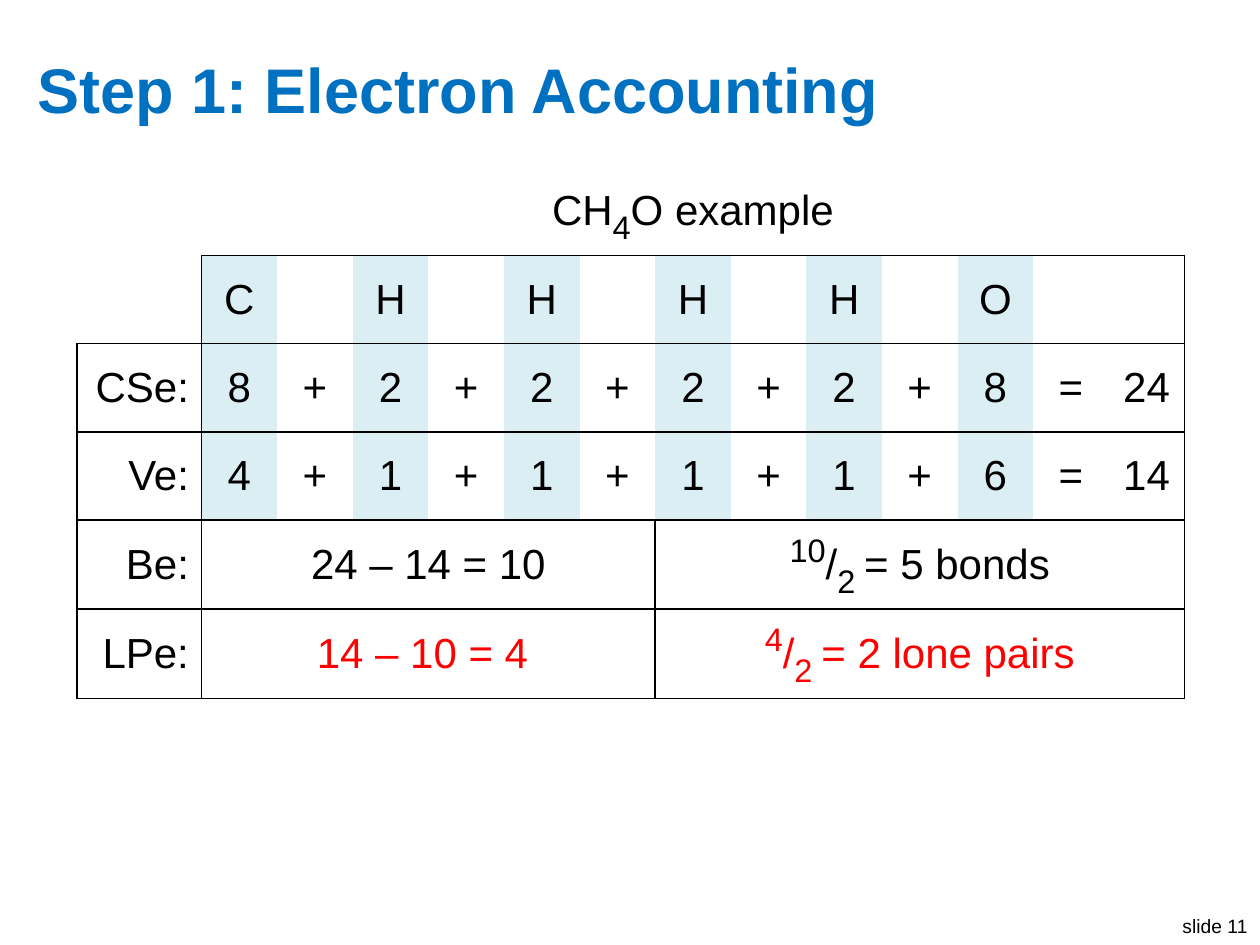
from typing import NamedTuple

from lxml import etree
from pptx import Presentation
from pptx.dml.color import RGBColor
from pptx.enum import text
from pptx.oxml import ns
from pptx.util import Inches, Pt

BLACK = RGBColor(0x00, 0x00, 0x00)
WHITE = RGBColor(0xFF, 0xFF, 0xFF)
BLUE = RGBColor(0x00, 0x70, 0xC0)
RED = RGBColor(0xFF, 0x00, 0x00)
PALE_BLUE = RGBColor(0xDB, 0xEE, 0xF4)
FONT = "Arial"
LEFT, CENTER, RIGHT = text.PP_ALIGN.LEFT, text.PP_ALIGN.CENTER, text.PP_ALIGN.RIGHT
SUB, SUPER = -25000, 30000
ROWS, COLS = 6, 14
SPLIT = 7  # grid line between the two merged answers


class Piece(NamedTuple):
    words: str
    baseline: int = 0


class Entry(NamedTuple):
    row: int
    col: int
    pieces: list[Piece]
    align: text.PP_ALIGN = CENTER
    span: int = 1
    color: RGBColor = BLACK


def style(r, size: float, color: RGBColor, bold: bool = False) -> None:
    r.font.name = FONT
    r.font.size = Pt(size)
    r.font.bold = bold
    r.font.color.rgb = color


def add_label(s, words: str, box: tuple, size: float, color: RGBColor,
              align: text.PP_ALIGN, bold: bool = False, wrap: bool = True,
              anchor=text.MSO_ANCHOR.TOP) -> None:
    tf = s.shapes.add_textbox(*map(Inches, box)).text_frame
    tf.word_wrap = wrap
    tf.vertical_anchor = anchor
    p = tf.paragraphs[0]
    p.text = words
    p.alignment = align
    style(p.runs[0], size, color, bold)


def has_vertical(row: int, line: int) -> bool:
    """Whether a vertical grid line is drawn beside this row."""
    first_row = {0: 2, 1: 1, SPLIT: 4, COLS: 1}
    return row >= first_row.get(line, ROWS)


def has_horizontal(line: int, col: int) -> bool:
    """Whether a horizontal grid line is drawn along this column."""
    return line >= (2 if col == 0 else 1)


def set_borders(cell, row: int, col: int, span: int) -> None:
    sides = {
        "lnL": has_vertical(row, col),
        "lnR": has_vertical(row, col + span),
        "lnT": has_horizontal(row, col),
        "lnB": has_horizontal(row + 1, col),
    }
    tc_pr = cell._tc.get_or_add_tcPr()
    for tag, drawn in sides.items():
        ln = etree.SubElement(tc_pr, ns.qn(f"a:{tag}"), w=str(Pt(1)))
        if drawn:
            fill = etree.SubElement(ln, ns.qn("a:solidFill"))
            etree.SubElement(fill, ns.qn("a:srgbClr"), val=str(BLACK))
        else:
            etree.SubElement(ln, ns.qn("a:noFill"))


def fill_entry(table, entry: Entry) -> None:
    cell = table.cell(entry.row, entry.col)
    if entry.span > 1:
        cell.merge(table.cell(entry.row, entry.col + entry.span - 1))
    p = cell.text_frame.paragraphs[0]
    p.alignment = entry.align
    for piece in entry.pieces:
        r = p.add_run()
        r.text = piece.words
        style(r, 32 if piece.baseline else 24, entry.color)
        if piece.baseline:
            r.font._element.set("baseline", str(piece.baseline))


def fraction(top: str, rest: str) -> list[Piece]:
    return [Piece(top, SUPER), Piece("/"), Piece("2 ", SUB), Piece(rest)]


def table_entries() -> list[Entry]:
    entries = [Entry(0, 1, [Piece("CH"), Piece("4", SUB), Piece("O example")], span=13)]
    # Row names
    for row, name in enumerate(["CSe:", "Ve:", "Be:", "LPe:"], start=2):
        entries.append(Entry(row, 0, [Piece(name)], RIGHT))
    # Atoms, and the sums under them
    for i, atom in enumerate("CHHHHO"):
        entries.append(Entry(1, 1 + 2 * i, [Piece(atom)]))
    for row, total in enumerate(["8 + 2 + 2 + 2 + 2 + 8 = 24",
                                 "4 + 1 + 1 + 1 + 1 + 6 = 14"], start=2):
        for col, term in enumerate(total.split(), start=1):
            entries.append(Entry(row, col, [Piece(term)]))
    # Bonding electrons and lone pairs
    answers = [("24 – 14 = 10", fraction("10", "= 5 bonds"), BLACK),
               ("14 – 10 = 4 ", fraction("4", "= 2 lone pairs"), RED)]
    for row, (difference, halves, color) in enumerate(answers, start=4):
        entries.append(Entry(row, 1, [Piece(difference)], span=SPLIT - 1, color=color))
        entries.append(Entry(row, SPLIT, halves, span=COLS - SPLIT, color=color))
    return entries


def add_accounting_table(s) -> None:
    table = s.shapes.add_table(ROWS, COLS, Inches(0.61), Inches(1.32),
                               Inches(8.79), Inches(4.2)).table
    table.first_row = table.horz_banding = False
    for i, column in enumerate(table.columns):
        column.width = Inches(0.6 if i else 0.99)
    for row in table.rows:
        row.height = Inches(0.7)

    entries = table_entries()
    for entry in entries:
        fill_entry(table, entry)

    spans = {(e.row, e.col): e.span for e in entries}
    for row in range(ROWS):
        for col in range(COLS):
            cell = table.cell(row, col)
            set_borders(cell, row, col, spans.get((row, col), 1))
            cell.vertical_anchor = text.MSO_ANCHOR.MIDDLE
            shaded = 1 <= row <= 3 and col % 2 == 1 and col < 12
            cell.fill.solid()
            cell.fill.fore_color.rgb = PALE_BLUE if shaded else WHITE


def main() -> None:
    prs = Presentation()
    prs.slide_width, prs.slide_height = Inches(10), Inches(7.5)
    s = prs.slides.add_slide(prs.slide_layouts[6])

    # Slide number and title
    add_label(s, "slide 11", (9.25, 7.21, 0.75, 0.29), 11, BLACK, RIGHT, wrap=False)
    add_label(s, "Step 1: Electron Accounting", (0.2, 0.3, 9.6, 0.8), 36, BLUE, LEFT,
              bold=True, anchor=text.MSO_ANCHOR.MIDDLE)

    # Electron counts
    add_accounting_table(s)
    prs.save("out.pptx")


if __name__ == "__main__":
    main()
